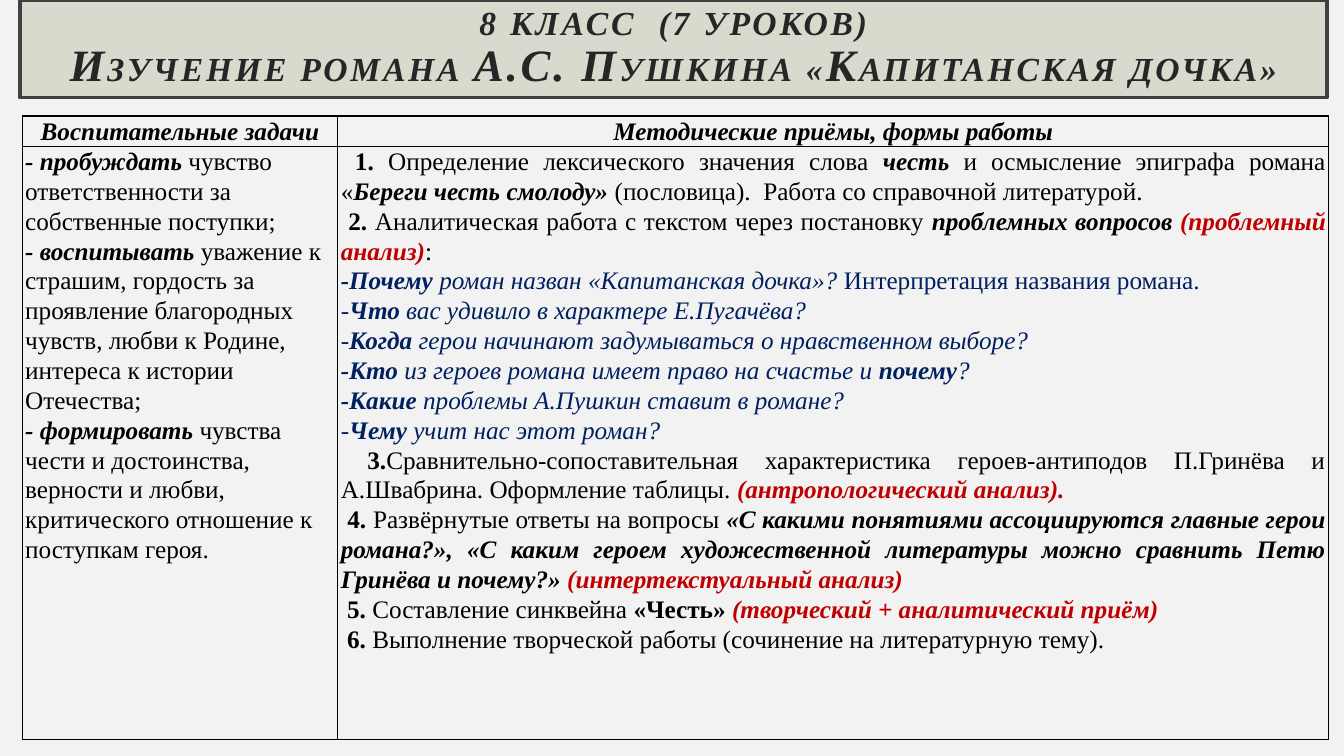
from lxml import etree
from pptx import Presentation
from pptx.dml.color import RGBColor
from pptx.enum.shapes import MSO_SHAPE
from pptx.enum.text import MSO_ANCHOR, PP_ALIGN as Align
from pptx.oxml.ns import qn
from pptx.util import Emu, Inches, Pt

PAPER = RGBColor(0xF2, 0xF2, 0xF2)
BANNER = RGBColor(0xD7, 0xDA, 0xCD)
FRAME = RGBColor(0x40, 0x40, 0x40)
TITLE = RGBColor(0x26, 0x26, 0x26)
BLACK = RGBColor(0, 0, 0)
RED = RGBColor(0xC0, 0, 0)
NAVY = RGBColor(0, 0x20, 0x60)
FONT = "Times New Roman"

# Text styles: bold, italic, colour
PLAIN = (False, False, BLACK)
BOLD = (True, False, BLACK)
STRONG = (True, True, BLACK)
METHOD = (True, True, RED)
ASK = (False, True, NAVY)
ASK_KEY = (True, True, NAVY)
ASK_NOTE = (False, False, NAVY)

TITLE_LINES = [
    [("8 КЛАСС  (7 УРОКОВ)", 24)],
    [("И", 32), ("ЗУЧЕНИЕ РОМАНА ", 24), ("А.С. П", 32),
     ("УШКИНА «", 24), ("К", 32), ("АПИТАНСКАЯ ДОЧКА»", 24)],
]

HEADINGS = ["Воспитательные задачи", "Методические приёмы, формы работы"]

TASKS = [
    [("- пробуждать ", STRONG),
     ("чувство ответственности за собственные поступки;", PLAIN)],
    [("- воспитывать ", STRONG),
     ("уважение к страшим, гордость за проявление благородных чувств, "
      "любви к Родине, интереса к истории Отечества;", PLAIN)],
    [("- формировать ", STRONG),
     ("чувства чести и достоинства, верности и любви, "
      "критического отношение к поступкам героя.", PLAIN)],
]

METHODS = [
    [(" 1. ", BOLD), ("Определение лексического значения слова ", PLAIN),
     ("честь", STRONG), (" и осмысление эпиграфа романа «", PLAIN),
     ("Береги честь смолоду» ", STRONG),
     ("(пословица).  Работа со справочной литературой.", PLAIN)],
    [(" 2. ", BOLD),
     ("Аналитическая работа с текстом через постановку ", PLAIN),
     ("проблемных вопросов ", STRONG), ("(проблемный анализ)", METHOD),
     (":", PLAIN)],
    [("-Почему ", ASK_KEY), ("роман назван «Капитанская дочка»? ", ASK),
     ("Интерпретация названия романа.", ASK_NOTE)],
    [("-", ASK), ("Что", ASK_KEY),
     (" вас удивило в характере Е.Пугачёва?", ASK)],
    [("-", ASK), ("Когда", ASK_KEY),
     (" герои начинают задумываться о нравственном выборе?", ASK)],
    [("-Кто", ASK_KEY), (" из героев романа имеет право на счастье и ", ASK),
     ("почему", ASK_KEY), ("?", ASK)],
    [("-Какие ", ASK_KEY), ("проблемы А.Пушкин ставит в романе?", ASK)],
    [("-", ASK), ("Чему", ASK_KEY), (" учит нас этот роман?", ASK)],
    [(" 3.", BOLD),
     ("Сравнительно-сопоставительная характеристика героев-антиподов "
      "П.Гринёва и А.Швабрина. Оформление таблицы. ", PLAIN),
     ("(антропологический анализ).", METHOD)],
    [(" 4. ", BOLD), ("Развёрнутые ответы на вопросы ", PLAIN),
     ("«С какими понятиями ассоциируются главные герои романа?», "
      "«С каким героем художественной литературы можно сравнить "
      "Петю Гринёва и почему?» ", STRONG),
     ("(интертекстуальный анализ)", METHOD)],
    [(" 5. ", BOLD), ("Составление синквейна ", PLAIN), ("«Честь» ", BOLD),
     ("(творческий + аналитический приём)", METHOD)],
    [(" 6. ", BOLD),
     ("Выполнение творческой работы (сочинение на литературную тему).",
      PLAIN)],
]


def add_banner(page, left, top, width, height):
    banner = page.shapes.add_shape(MSO_SHAPE.RECTANGLE, left, top, width, height)
    banner.shadow.inherit = False
    banner.fill.solid()
    banner.fill.fore_color.rgb = BANNER
    banner.line.color.rgb = FRAME
    banner.line.width = Pt(2.5)
    frame = banner.text_frame
    frame.word_wrap = True
    frame.vertical_anchor = MSO_ANCHOR.MIDDLE
    frame.margin_left = frame.margin_right = Inches(0.2)
    frame.margin_top = frame.margin_bottom = Inches(0.2)
    for index, line in enumerate(TITLE_LINES):
        para = frame.add_paragraph() if index else frame.paragraphs[0]
        para.alignment = Align.CENTER
        para.line_spacing = 0.9
        para.font.name = FONT
        para.font.bold = para.font.italic = True
        for text, size in line:
            span = para.add_run()
            span.text = text
            span.font.size = Pt(size)
            span.font.color.rgb = TITLE
            span.font._element.set("spc", "200")


def outline_cell(cell):
    """Draw a thin black border on all four sides."""
    properties = cell._tc.get_or_add_tcPr()
    for index, side in enumerate(("a:lnL", "a:lnR", "a:lnT", "a:lnB")):
        line = etree.Element(qn(side), w=str(Pt(1)))
        fill = etree.SubElement(line, qn("a:solidFill"))
        etree.SubElement(fill, qn("a:srgbClr"), val=str(BLACK))
        properties.insert(index, line)


def fill_cell(cell, paragraphs, alignment):
    cell.fill.background()
    outline_cell(cell)
    cell.margin_left = cell.margin_right = Inches(0.03)
    cell.margin_top = cell.margin_bottom = Emu(0)
    frame = cell.text_frame
    for index, spans in enumerate(paragraphs):
        para = frame.add_paragraph() if index else frame.paragraphs[0]
        para.alignment = alignment
        para.line_spacing = 1.07
        para.font.name = FONT
        para.font.size = Pt(18)
        for text, (bold, italic, colour) in spans:
            span = para.add_run()
            span.text = text
            span.font.bold = bold
            span.font.italic = italic
            span.font.color.rgb = colour


def add_plan(page, left, top, width, height):
    """Add the table of educational tasks and teaching methods."""
    table = page.shapes.add_table(2, 2, left, top, width, height).table
    table.first_row = table.horz_banding = False
    table.columns[0].width = Inches(3.13)
    table.columns[1].width = width - Inches(3.13)
    table.rows[0].height = Inches(0.3)
    table.rows[1].height = height - Inches(0.3)
    for column, heading in enumerate(HEADINGS):
        fill_cell(table.cell(0, column), [[(heading, STRONG)]], Align.CENTER)
    fill_cell(table.cell(1, 0), TASKS, Align.LEFT)
    fill_cell(table.cell(1, 1), METHODS, Align.JUSTIFY)


def main():
    deck = Presentation()
    deck.slide_width = Inches(13.33)
    deck.slide_height = Inches(7.5)
    page = deck.slides.add_slide(deck.slide_layouts[6])
    page.background.fill.solid()
    page.background.fill.fore_color.rgb = PAPER
    add_banner(page, Inches(0.2), Inches(0), Inches(12.96), Inches(0.97))
    add_plan(page, Inches(0.22), Inches(1.15), Inches(12.96), Inches(6.19))
    deck.save("out.pptx")


if __name__ == "__main__":
    main()
